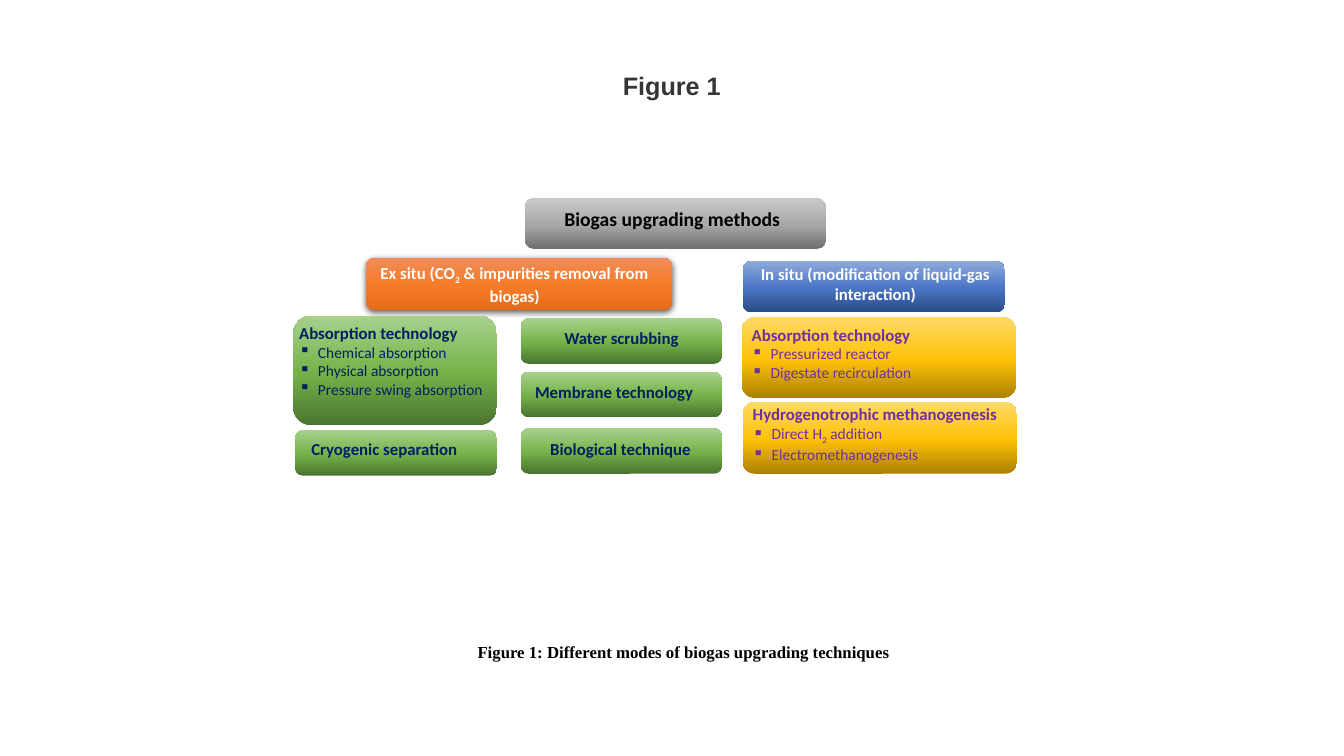
from copy import deepcopy

from lxml.etree import SubElement
from pptx import Presentation
from pptx.dml.color import RGBColor
from pptx.enum.shapes import MSO_SHAPE as Shape
from pptx.enum.text import PP_ALIGN as Align
from pptx.oxml.ns import qn
from pptx.util import Pt

# Gradient colours from bottom to top
GRAY = ("6F6F6F", "A8A8A8", "C9C9C9")
ORANGE = ("E56C19", "F67B28", "F18C57")
BLUE = ("2A4B86", "4A76C6", "8FAADC")
GREEN = ("4B7430", "74B349", "A9D18E")
GOLD = ("AB8100", "FFC208", "FFD966")
STOPS = (0, 0.48, 1)

BLACK, WHITE, NAVY, PURPLE = "000000", "FFFFFF", "002060", "7030A0"

# Panel: place, gradient; label: place, colour, size, alignment, heading, bullets
HEADERS = [
    ((375.1, 141.8, 214.6, 36), GRAY, (367.9, 144, 224.6, 28.1),
     BLACK, 14, Align.CENTER, "Biogas upgrading methods", []),
    ((261.4, 184.3, 218.9, 37.4), ORANGE, (263.5, 184.3, 208.1, 41.8),
     WHITE, 12, Align.CENTER, "Ex situ (CO~2~ & impurities removal from biogas)", []),
    ((530.6, 186.5, 187.2, 36.7), BLUE, (514, 185, 222.6, 36),
     WHITE, 12, Align.CENTER, "In situ (modification of liquid-gas interaction)", []),
]
METHODS = [
    ((209.5, 225.4, 145.4, 78.5), GREEN, (206.6, 226.8, 154.1, 71.3),
     NAVY, 12, Align.LEFT, "Absorption technology",
     ["Chemical absorption", "Physical absorption", "Pressure swing absorption"]),
    ((372.2, 227.5, 143.3, 32.4), GREEN, (396, 230.4, 105.1, 25.2),
     NAVY, 12, Align.LEFT, "Water scrubbing", []),
    ((372.2, 265.7, 143.3, 32.4), GREEN, (375.1, 269.3, 144, 25.2),
     NAVY, 12, Align.LEFT, "Membrane technology", []),
    ((372.2, 306, 143.3, 32.4), GREEN, (385.9, 309.6, 123.8, 25.2),
     NAVY, 12, Align.LEFT, "Biological technique", []),
    ((211, 307.4, 144, 32.4), GREEN, (215.3, 309.6, 123.8, 25.2),
     NAVY, 12, Align.LEFT, "Cryogenic separation", []),
    ((529.9, 226.8, 195.8, 57.6), GOLD, (529.9, 228.2, 134.6, 56.2),
     PURPLE, 12, Align.LEFT, "Absorption technology",
     ["Pressurized reactor", "Digestate recirculation"]),
    ((530.6, 287.3, 195.8, 51.1), GOLD, (530.6, 285.1, 213.1, 75.6),
     PURPLE, 12, Align.LEFT, "Hydrogenotrophic methanogenesis",
     ["Direct H~2~ addition", "Electromethanogenesis"]),
]


def rgb(code):
    return RGBColor.from_string(code)


def points(place):
    return [Pt(length) for length in place]


def add_panel(shapes, place, gradient):
    """Rounded rectangle with a three-colour vertical gradient."""
    panel = shapes.add_shape(Shape.ROUNDED_RECTANGLE, *points(place))
    panel.shadow.inherit = False
    panel.line.fill.background()
    panel.fill.gradient()
    panel.fill.gradient_angle = 90
    stop_list = panel._element.spPr.find(".//" + qn("a:gsLst"))
    stop_list.insert(1, deepcopy(stop_list[0]))
    for stop, position, code in zip(panel.fill.gradient_stops, STOPS, gradient):
        stop.position = position
        stop.color.rgb = rgb(code)
    return panel


def add_drop_shadow(panel):
    effects = panel._element.spPr.find(qn("a:effectLst"))
    shadow = SubElement(effects, qn("a:outerShdw"), blurRad=str(Pt(4.5)),
                        dist=str(Pt(1.5)), dir="5400000", rotWithShape="0")
    color = SubElement(shadow, qn("a:srgbClr"), val=BLACK)
    SubElement(color, qn("a:alpha"), val="63000")


def add_spans(para, text, size, color, bold, font_name):
    """Add the runs of a paragraph; text between tildes is subscript."""
    for index, part in enumerate(text.split("~")):
        span = para.add_run()
        span.text = part
        font = span.font
        font.name, font.size, font.bold = font_name, Pt(size), bold
        font.color.rgb = rgb(color)
        if index % 2:
            span._r.get_or_add_rPr().set("baseline", "-25000")


def add_bullet(para):
    props = para._p.get_or_add_pPr()
    props.set("marL", str(Pt(13.5)))
    props.set("indent", str(Pt(-13.5)))
    SubElement(props, qn("a:buChar"), char="▪")


def add_label(shapes, place, color, size, align, heading, bullets=(),
              font_name="Calibri", wrap=True):
    """Text box with a bold heading and optional bullet points."""
    box = shapes.add_textbox(*points(place))
    frame = box.text_frame
    frame.word_wrap = wrap
    para = frame.paragraphs[0]
    para.alignment = align
    add_spans(para, heading, size, color, True, font_name)
    for item in bullets:
        para = frame.add_paragraph()
        add_bullet(para)
        add_spans(para, item, 11, color, False, font_name)


def main():
    deck = Presentation()
    deck.slide_width, deck.slide_height = Pt(960), Pt(540)
    page = deck.slides.add_slide(deck.slide_layouts[6])

    # Diagram
    diagram = page.shapes.add_group_shape().shapes
    for place, gradient, *label in HEADERS + METHODS:
        panel = add_panel(diagram, place, gradient)
        if gradient is ORANGE:
            add_drop_shadow(panel)
        add_label(diagram, *label)

    # Caption and page heading
    add_label(page.shapes, (20, 455, 936.7, 21.8), BLACK, 12, Align.CENTER,
              "Figure 1: Different modes of biogas upgrading techniques",
              font_name="Times New Roman")
    add_label(page.shapes, (437.8, 46.8, 85, 28.8), "363535", 18, Align.LEFT,
              "Figure 1", font_name="Arial", wrap=False)

    deck.save("out.pptx")


if __name__ == "__main__":
    main()
